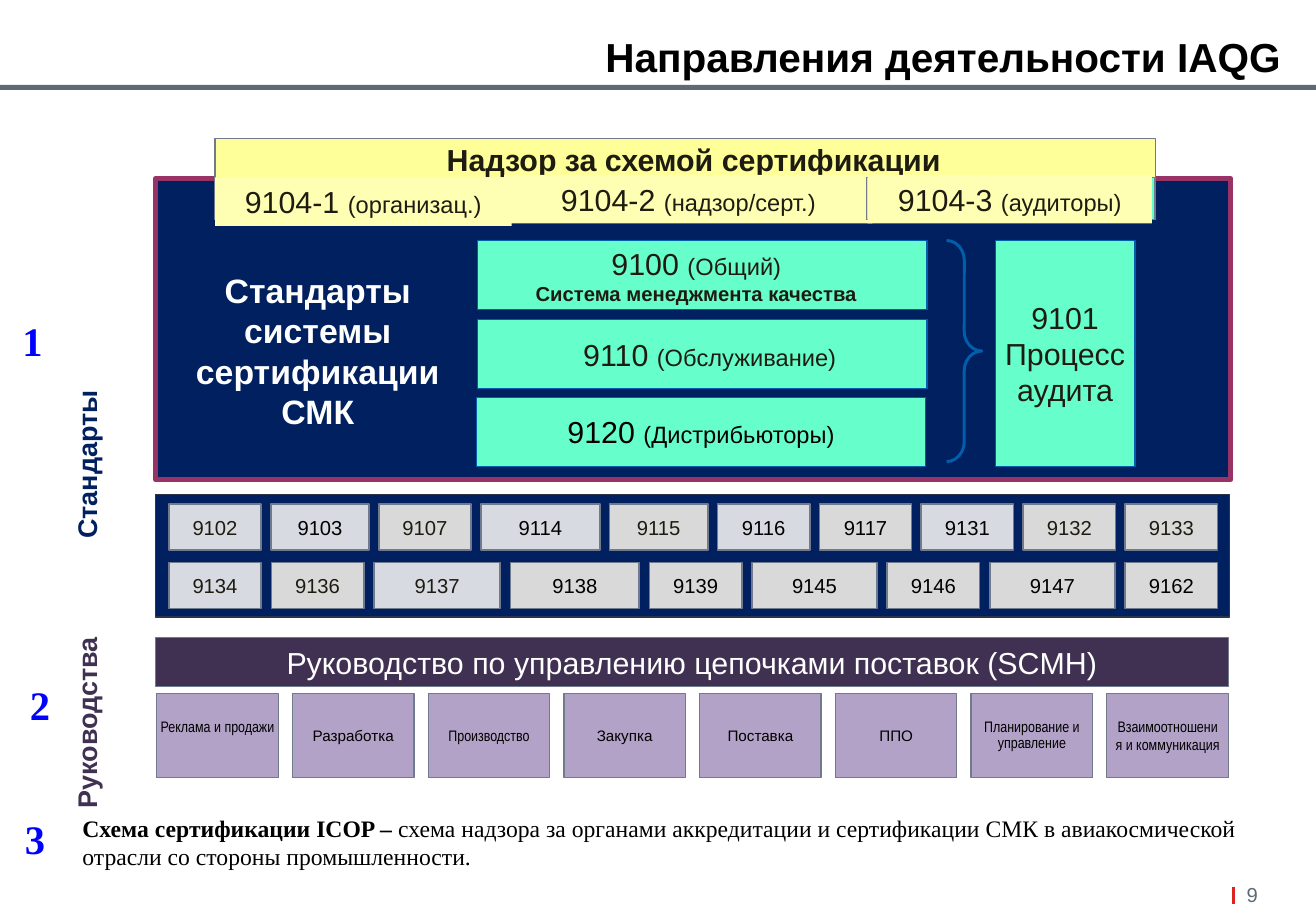
from dataclasses import dataclass

from lxml import etree
from pptx import Presentation
from pptx.dml.color import RGBColor
from pptx.enum.shapes import MSO_CONNECTOR, MSO_SHAPE
from pptx.enum.text import MSO_ANCHOR, PP_ALIGN
from pptx.oxml.ns import qn
from pptx.util import Inches, Pt

RECT, BRACE = MSO_SHAPE.RECTANGLE, MSO_SHAPE.RIGHT_BRACE
STRAIGHT = MSO_CONNECTOR.STRAIGHT
LEFT, CENTER, RIGHT = PP_ALIGN.LEFT, PP_ALIGN.CENTER, PP_ALIGN.RIGHT
TOP, MIDDLE, BOTTOM = MSO_ANCHOR.TOP, MSO_ANCHOR.MIDDLE, MSO_ANCHOR.BOTTOM
SERIF, NARROW = "Times New Roman", "Arial Narrow"

COLORS = {
    "black": "000000", "white": "FFFFFF", "ink": "1E1C11", "gray": "606A74",
    "red": "DC241F", "navy": "002060", "maroon": "993366", "mint": "66FFCC",
    "blue": "005EAB", "slate": "2B3549", "edge": "71798C", "cool": "D7DAE1",
    "silver": "D9D9D9", "yellow": "FFFF99", "cream": "FFFFB3",
    "plum": "403152", "lilac": "B3A2C7", "number": "0000FF",
}


@dataclass(frozen=True)
class Run:
    text: str
    size: float
    bold: bool = False
    font: str = "Arial"


Paragraphs = tuple[tuple[Run, ...], ...]


@dataclass(frozen=True)
class Box:
    """A rectangle, or a plain text box when it has no fill."""
    at: tuple[float, float, float, float]
    paragraphs: Paragraphs = ()
    fill: str = ""
    line: str = ""
    weight: float = 0.75
    ink: str = "ink"
    align: PP_ALIGN = CENTER
    anchor: MSO_ANCHOR = MIDDLE
    insets: tuple[float, float, float, float] = (0.1, 0.05, 0.1, 0.05)
    wrap: bool = True
    rotation: float = 0
    spacing: float = 1.0


@dataclass(frozen=True)
class Chip:
    code: str
    width: float = 0.76
    fill: str = "silver"
    ink: str = "black"


@dataclass(frozen=True)
class Card:
    text: str
    font: str = "Arial"
    side: float = 0.07
    lift: float = 0.05
    spacing: float = 1.0


def rgb(name: str) -> RGBColor:
    return RGBColor.from_string(COLORS[name])


def code(number: str, note: str) -> tuple[Run, ...]:
    return Run(number + " ", 18), Run(note, 14)


def write(shape, box: Box) -> None:
    tf = shape.text_frame
    left, top, right, bottom = map(Inches, box.insets)
    frame = {"word_wrap": box.wrap, "vertical_anchor": box.anchor,
             "margin_left": left, "margin_top": top,
             "margin_right": right, "margin_bottom": bottom}
    for key, value in frame.items():
        setattr(tf, key, value)
    for i, runs in enumerate(box.paragraphs):
        p = tf.add_paragraph() if i else tf.paragraphs[0]
        p.alignment, p.line_spacing = box.align, box.spacing
        for run in runs:
            r = p.add_run()
            r.text = run.text
            font = {"size": Pt(run.size), "bold": run.bold, "name": run.font}
            for key, value in font.items():
                setattr(r.font, key, value)
            r.font.color.rgb = rgb(box.ink)


def draw(shapes, box: Box) -> None:
    place = map(Inches, box.at)
    if box.fill:
        s = shapes.add_shape(RECT, *place)
        s.shadow.inherit = False
        s.fill.solid()
        s.fill.fore_color.rgb = rgb(box.fill)
        if box.line:
            s.line.color.rgb = rgb(box.line)
            s.line.width = Pt(box.weight)
        else:
            s.line.fill.background()
    else:
        s = shapes.add_textbox(*place)
    s.rotation = box.rotation
    if box.paragraphs:
        write(s, box)


def draw_brace(shapes) -> None:
    s = shapes.add_shape(BRACE, *map(Inches, (7.79, 1.98, 0.29, 1.82)))
    s.adjustments[0] = 0.56
    s.shadow.inherit = False
    s.fill.background()
    s.line.color.rgb = rgb("blue")
    s.line.width = Pt(1.75)


def draw_page_mark(shapes) -> None:
    s = shapes.add_connector(STRAIGHT, *map(Inches, (10.15, 7.3, 10.15, 7.44)))
    s.line.color.rgb = rgb("red")
    s.line.width = Pt(1.5)
    etree.SubElement(s._element.spPr, qn("a:effectLst"))


def chip_row(chips: tuple[Chip, ...], top: float) -> list[Box]:
    """Spread the chips over the panel with equal gaps."""
    left, span = 1.39, 8.63
    gap = (span - sum(c.width for c in chips)) / (len(chips) - 1)
    boxes = []
    for c in chips:
        boxes.append(Box((left, top, c.width, 0.38), ((Run(c.code, 12),),),
                         c.fill, "edge", 1, c.ink, wrap=False))
        left += c.width + gap
    return boxes


def card_row(cards: tuple[Card, ...]) -> list[Box]:
    return [Box((1.29 + 1.117 * i, 5.71, 1, 0.69),
                ((Run(c.text, 9, font=c.font),),), "lilac", "edge",
                ink="black", insets=(c.side, 0.05, c.side, c.lift),
                spacing=c.spacing) for i, c in enumerate(cards)]


FLUSH = (0, 0, 0, 0)
CERTIFICATION = (
    Box((0, 0.7, 10.83, 0.04), fill="gray"),
    Box((-0.82, 2.72, 3.06, 0.37), ((Run("Стандарты", 16, True),),),
        ink="navy", align=LEFT, insets=FLUSH, rotation=270),
    Box((1.28, 1.47, 8.85, 2.48), fill="navy", line="maroon", weight=3),
    Box((3.93, 1.98, 3.7, 0.57),
        (code("9100", "(Общий)"),
         (Run("Система менеджмента качества", 12, True),)),
        "mint", "blue", insets=(0, 0, 0.1, 0)),
    Box((3.93, 2.63, 3.7, 0.57), (code("9110", "(Обслуживание)"),),
        "mint", "blue", insets=(0.22, 0.05, 0.1, 0.05)),
    Box((3.92, 3.27, 3.7, 0.57), (code("9120", "(Дистрибьюторы)"),),
        "mint", "blue", ink="black"),
    Box((8.19, 1.98, 1.15, 1.86),
        tuple((Run(t, 18),) for t in ("9101", "Процесс", "аудита")),
        "mint", "blue", wrap=False),
    Box((1.37, 2.17, 2.49, 1.6),
        ((Run("Стандарты системы сертификации СМК", 20, True),),),
        ink="white", anchor=TOP),
    Box((1.77, 1.14, 7.74, 0.67),
        ((Run("Надзор за схемой сертификации", 18, True),),),
        "yellow", "edge", anchor=TOP, insets=(0.14, 0.02, 0, 0)),
    Box((1.77, 1.46, 2.44, 0.4), (code("9104-1", "(организац.)"),), "cream"),
    Box((4.15, 1.44, 3.03, 0.4), (code("9104-2", "(надзор/серт.)"),), "cream"),
    Box((7.13, 1.46, 2.37, 0.35), fill="mint", line="edge"),
    Box((7.14, 1.44, 2.34, 0.4), (code("9104-3", "(аудиторы)"),), "cream"),
    Box((1.28, 4.07, 8.84, 1.01), fill="navy", line="slate"),
)
CHIP_ROWS = {
    4.15: (Chip("9102", fill="cool", ink="ink"), Chip("9103", 0.81, "cool"),
           Chip("9107", ink="ink"), Chip("9114", 0.98, "cool"),
           Chip("9115", 0.81, ink="ink"), Chip("9116", fill="cool"),
           Chip("9117"), Chip("9131", fill="cool"),
           Chip("9132", ink="ink"), Chip("9133", ink="ink")),
    4.63: (Chip("9134", fill="cool", ink="ink"), Chip("9136", ink="ink"),
           Chip("9137", 1.04, "cool", "ink"), Chip("9138", 1.06),
           Chip("9139"), Chip("9145", 1.03), Chip("9146"),
           Chip("9147", 1.03), Chip("9162")),
}
CARDS = (
    Card("Реклама и продажи", NARROW, 0.01, 0.2), Card("Разработка"),
    Card("Производство", NARROW), Card("Закупка"), Card("Поставка"),
    Card("ППО"), Card("Планирование и управление", NARROW, spacing=0.9),
    Card("Взаимоотношения и коммуникация", NARROW),
)
GUIDES = (
    Box((-0.21, 5.55, 1.84, 0.37), ((Run("Руководства", 16, True),),),
        ink="plum", align=LEFT, insets=FLUSH, rotation=270),
    Box((1.28, 5.25, 8.83, 0.4),
        ((Run("Руководство по управлению цепочками поставок (SCMH)", 18),),),
        "plum", "edge", ink="white", wrap=False),
    Box((0.58, 6.65, 10.1, 0.57),
        ((Run("Схема сертификации ICOP – ", 14, True, SERIF),
          Run("схема надзора за органами аккредитации и сертификации СМК в "
              "авиакосмической отрасли со стороны промышленности.",
              14, font=SERIF)),), ink="black", align=LEFT, anchor=TOP),
    Box((10.26, 7.26, 0.17, 0.2), ((Run("9", 12),),), ink="gray",
        align=LEFT, anchor=TOP, insets=FLUSH, wrap=False),
)
NUMBERS = {"1": (0.08, 2.55), "2": (0.14, 5.55), "3": (0.1, 6.65)}
TITLE = Box((2.76, 0.05, 7.78, 0.62),
            ((Run("Направления деятельности IAQG", 24, True),),), ink="black",
            align=RIGHT, anchor=BOTTOM, insets=FLUSH, spacing=0.93)


def main() -> None:
    prs = Presentation()
    prs.slide_width, prs.slide_height = Inches(10.83), Inches(7.5)
    shapes = prs.slides.add_slide(prs.slide_layouts[5]).shapes
    title = shapes.title
    title.left, title.top, title.width, title.height = map(Inches, TITLE.at)
    write(title, TITLE)
    chips = [b for top, row in CHIP_ROWS.items() for b in chip_row(row, top)]
    numbers = [Box((*at, 0.37, 0.51), ((Run(n, 24, True, SERIF),),),
                   ink="number", align=RIGHT, anchor=TOP, wrap=False)
               for n, at in NUMBERS.items()]
    for box in (*CERTIFICATION, *chips, *card_row(CARDS), *GUIDES, *numbers):
        draw(shapes, box)
    draw_brace(shapes)
    draw_page_mark(shapes)
    prs.save("out.pptx")


if __name__ == "__main__":
    main()
